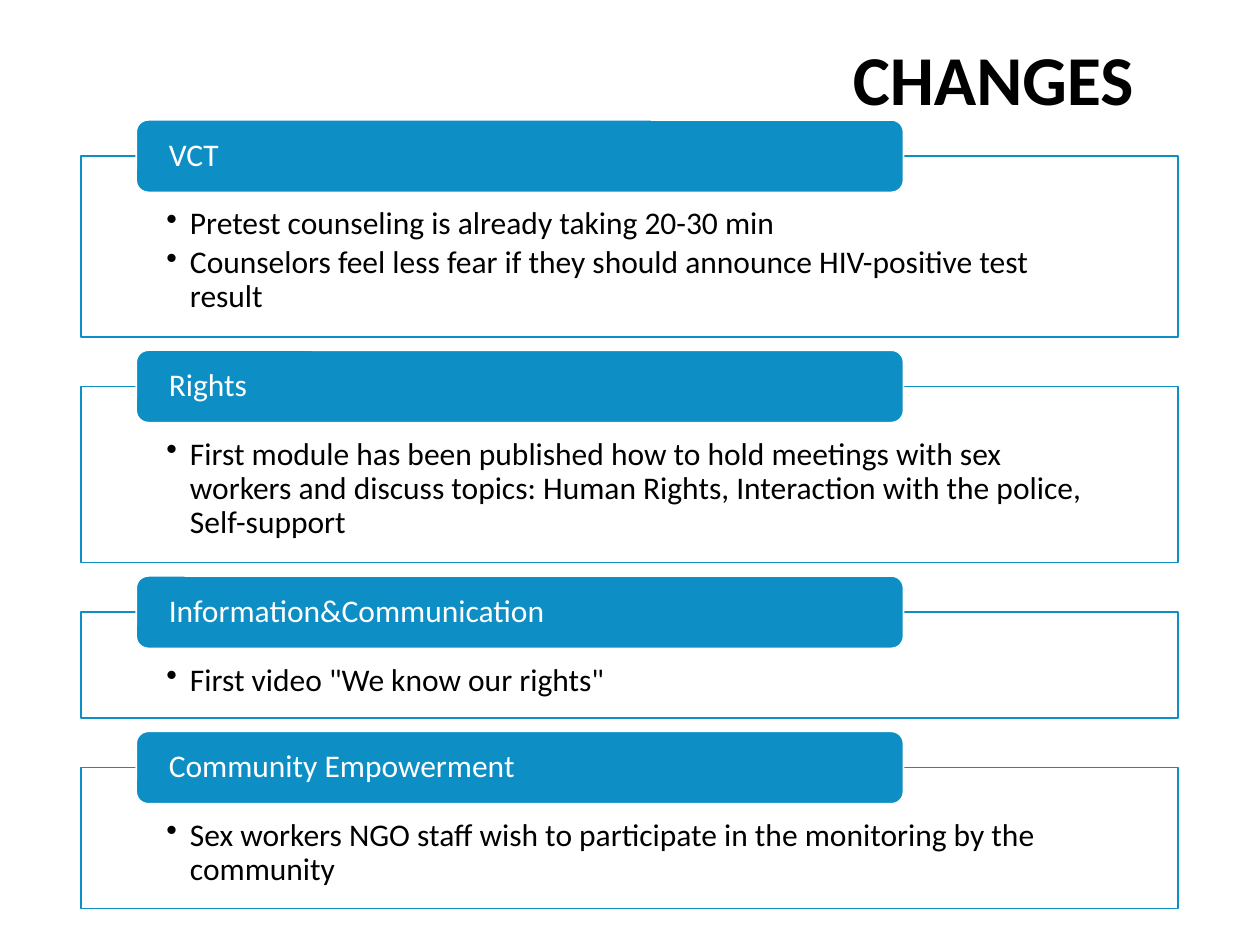
from pptx import Presentation
from pptx.dml.color import RGBColor
from pptx.enum.shapes import MSO_SHAPE as SHAPE
from pptx.enum.text import MSO_ANCHOR as ANCHOR, PP_ALIGN as ALIGN
from pptx.oxml.ns import qn
from pptx.util import Pt
from lxml.etree import SubElement

# Content: heading, box height, bullets
TITLE = "CHANGES"
SECTIONS = [
    ("VCT", 103.2, [
        "Pretest counseling is already taking 20-30 min",
        "Counselors feel less fear if they should announce HIV-positive test result",
    ]),
    ("Rights", 100.6, [
        "First module has been published how to hold meetings with sex workers "
        "and discuss topics: Human Rights, Interaction with the police, Self-support",
    ]),
    ("Information&Communication", 60.4, [
        'First video "We know our rights"',
    ]),
    ("Community Empowerment", 80.6, [
        "Sex workers NGO staff wish to participate in the monitoring by the community",
    ]),
]

FONT = "Calibri"
BLUE = RGBColor(0x0D, 0x8E, 0xC5)
WHITE = RGBColor(0xFF, 0xFF, 0xFF)
BLACK = RGBColor(0, 0, 0)

# Layout in points
LEFT, WIDTH, TOP, GAP = 46.5, 626.5, 89.2, 28.4
TAB_LEFT, TAB_WIDTH, TAB_HEIGHT = 77.8, 438.5, 41.4
BULLET_INDENT = 13.5


def set_insets(tf, left, top, right, bottom):
    tf.margin_left, tf.margin_top = Pt(left), Pt(top)
    tf.margin_right, tf.margin_bottom = Pt(right), Pt(bottom)


def add_text(p, text, size, color, align=ALIGN.LEFT, bold=False):
    p.alignment = align
    p.line_spacing = 0.9
    r = p.add_run()
    r.text = text
    r.font.name, r.font.size, r.font.bold = FONT, Pt(size), bold
    r.font.color.rgb = color


def add_panel(s, kind, left, top, width, height, fill, line):
    sp = s.shapes.add_shape(kind, Pt(left), Pt(top), Pt(width), Pt(height))
    sp.shadow.inherit = False
    sp.fill.solid()
    sp.fill.fore_color.rgb = fill
    sp.line.color.rgb = line
    sp.line.width = Pt(1)
    sp.text_frame.word_wrap = True
    return sp


def add_bullet(p, text):
    p.level = 1
    pPr = p._p.get_or_add_pPr()
    pPr.set("marL", str(Pt(BULLET_INDENT)))
    pPr.set("indent", str(-Pt(BULLET_INDENT)))
    SubElement(pPr, qn("a:buChar")).set("char", "•")
    p.space_after = Pt(2.7)
    add_text(p, text, 18, BLACK)


prs = Presentation()
prs.slide_width, prs.slide_height = Pt(720), Pt(540)
s = prs.slides.add_slide(prs.slide_layouts[5])

# Title
title = s.shapes.title
title.left, title.top, title.width, title.height = Pt(171.4), Pt(20.2), Pt(501.8), Pt(54)
tf = title.text_frame
tf.vertical_anchor = ANCHOR.MIDDLE
set_insets(tf, 7.2, 3.6, 25.5, 3.6)
add_text(tf.paragraphs[0], TITLE, 40, BLACK, ALIGN.RIGHT, bold=True)

# Sections: bullet box with a heading tab centred on its top edge
top = TOP
for heading, height, bullets in SECTIONS:
    box = add_panel(s, SHAPE.RECTANGLE, LEFT, top, WIDTH, height, WHITE, BLUE)
    tf = box.text_frame
    tf.vertical_anchor = ANCHOR.TOP
    set_insets(tf, 48.6, 29.5, 48.6, 10)
    for i, text in enumerate(bullets):
        add_bullet(tf.add_paragraph() if i else tf.paragraphs[0], text)

    tab = add_panel(s, SHAPE.ROUNDED_RECTANGLE, TAB_LEFT, top - TAB_HEIGHT / 2,
                    TAB_WIDTH, TAB_HEIGHT, BLUE, WHITE)
    tf = tab.text_frame
    tf.vertical_anchor = ANCHOR.MIDDLE
    set_insets(tf, 16.6, 0, 16.6, 0)
    add_text(tf.paragraphs[0], heading, 18, WHITE)
    top += height + GAP

prs.save("out.pptx")
